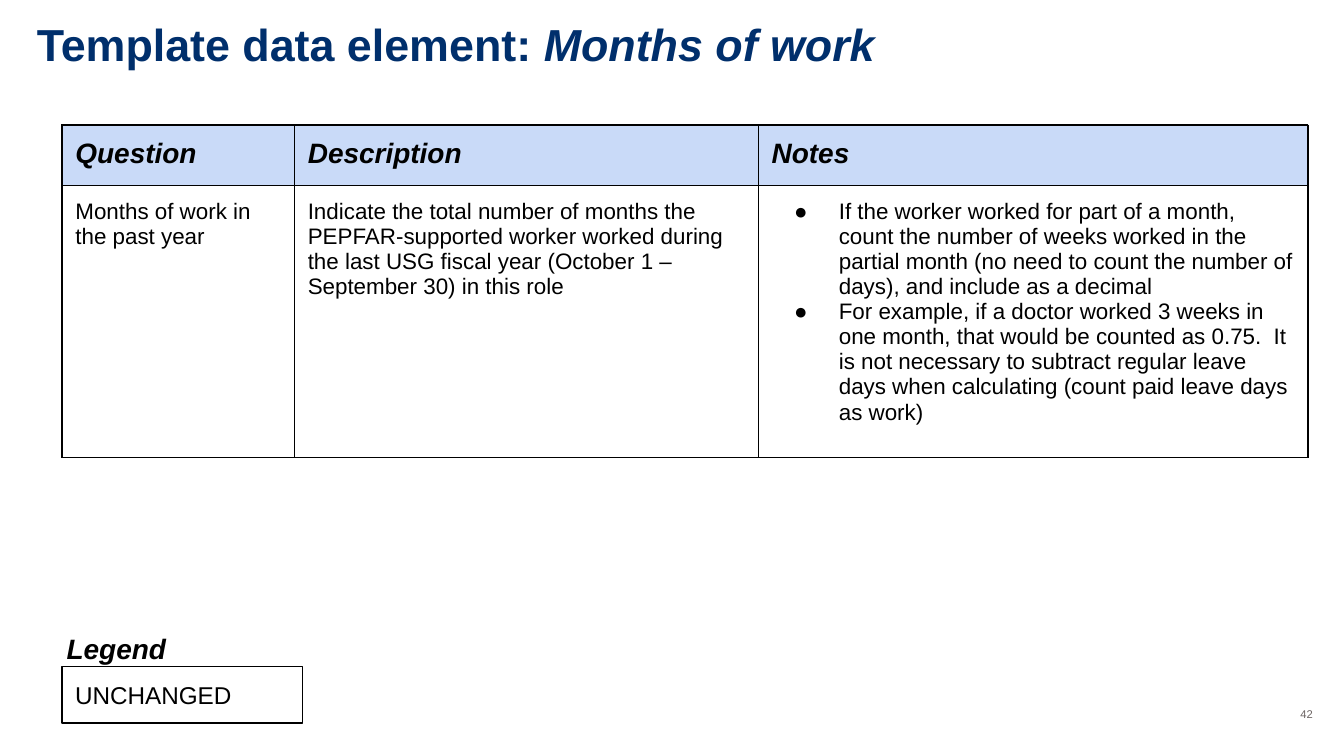
from lxml.etree import SubElement
from pptx import Presentation
from pptx.dml.color import RGBColor
from pptx.enum.shapes import MSO_SHAPE as Shape
from pptx.enum.text import MSO_ANCHOR as Anchor, PP_ALIGN as Align
from pptx.oxml.ns import qn
from pptx.util import Pt

TITLE = [("Template data element: ", False), ("Months of work", True)]
HEADINGS = ["Question", "Description", "Notes"]
ANSWERS = [
    ["Months of work in the past year"],
    ["Indicate the total number of months the PEPFAR-supported worker worked "
     "during the last USG fiscal year (October 1 – September 30) in this role"],
    ["If the worker worked for part of a month, count the number of weeks worked "
     "in the partial month (no need to count the number of days), and include as a decimal",
     "For example, if a doctor worked 3 weeks in one month, that would be counted as 0.75.  "
     "It is not necessary to subtract regular leave days when calculating "
     "(count paid leave days as work)"],
]
BULLETED = 2
WIDTHS = [124.5, 248.5, 294.5]
HEIGHTS = [30.8, 145.5]
LEFT, TOP = 33.2, 67
INSET = 7.2
BLACK, NAVY, GRAY, BLUE = "000000", "002F6C", "6C6463", "C9DAF8"


def color(code):
    return RGBColor.from_string(code)


def add_span(para, text, size, code=BLACK, bold=False, italic=False):
    span = para.add_run()
    span.text = text
    font = span.font
    font.name, font.size, font.bold, font.italic = "Arial", Pt(size), bold, italic
    font.color.rgb = color(code)


def set_frame(frame, anchor=Anchor.TOP, vertical=INSET):
    frame.word_wrap = True
    frame.vertical_anchor = anchor
    frame.margin_left = frame.margin_right = Pt(INSET)
    frame.margin_top = frame.margin_bottom = Pt(vertical)


def add_box(page, left, top, width, height):
    return page.shapes.add_textbox(Pt(left), Pt(top), Pt(width), Pt(height))


def add_bullet(para):
    props = para._p.get_or_add_pPr()
    props.set("marL", str(Pt(36)))
    props.set("indent", str(-Pt(24)))
    bullet_color = SubElement(props, qn("a:buClr"))
    SubElement(bullet_color, qn("a:srgbClr"), val=BLACK)
    SubElement(props, qn("a:buFont"), typeface="Arial")
    SubElement(props, qn("a:buChar"), char="●")


def add_borders(cell):
    props = cell._tc.get_or_add_tcPr()
    for side in ("lnL", "lnR", "lnT", "lnB"):
        line = SubElement(props, qn(f"a:{side}"), w=str(Pt(0.75)))
        fill = SubElement(line, qn("a:solidFill"))
        SubElement(fill, qn("a:srgbClr"), val=BLACK)


def fill_cell(cell, texts, heading, bulleted):
    cell.margin_left = cell.margin_right = Pt(INSET)
    cell.margin_top = cell.margin_bottom = Pt(INSET)
    add_borders(cell)
    if heading:
        cell.fill.solid()
        cell.fill.fore_color.rgb = color(BLUE)
    else:
        cell.fill.background()
    frame = cell.text_frame
    for index, text in enumerate(texts):
        para = frame.add_paragraph() if index else frame.paragraphs[0]
        if bulleted:
            add_bullet(para)
        add_span(para, text, 15 if heading else 12, bold=heading, italic=heading)


def add_question_table(page):
    table = page.shapes.add_table(
        len(HEIGHTS), len(WIDTHS), Pt(LEFT), Pt(TOP), Pt(sum(WIDTHS)), Pt(sum(HEIGHTS))
    ).table
    table.first_row = table.horz_banding = False
    for row, height in zip(table.rows, HEIGHTS):
        row.height = Pt(height)
    for index, width in enumerate(WIDTHS):
        table.columns[index].width = Pt(width)
        fill_cell(table.cell(0, index), [HEADINGS[index]], True, False)
        fill_cell(table.cell(1, index), ANSWERS[index], False, index == BULLETED)


def add_legend(page):
    box = page.shapes.add_shape(Shape.RECTANGLE, Pt(LEFT), Pt(357.2), Pt(129), Pt(30.2))
    box.shadow.inherit = False
    box.fill.background()
    box.line.color.rgb = color(BLACK)
    box.line.width = Pt(0.75)
    set_frame(box.text_frame)
    para = box.text_frame.paragraphs[0]
    para.alignment = Align.LEFT
    add_span(para, "UNCHANGED", 13)

    label = add_box(page, 28.6, 331.2, 83.5, 32.4)
    set_frame(label.text_frame)
    add_span(label.text_frame.paragraphs[0], "Legend", 15, bold=True, italic=True)


def main():
    deck = Presentation()
    deck.slide_width, deck.slide_height = Pt(720), Pt(405)
    page = deck.slides.add_slide(deck.slide_layouts[5])

    title = page.shapes.title
    title.left, title.top, title.width, title.height = Pt(12.5), Pt(-0.7), Pt(671), Pt(45.4)
    set_frame(title.text_frame, Anchor.BOTTOM)
    para = title.text_frame.paragraphs[0]
    para.alignment = Align.LEFT
    for text, italic in TITLE:
        add_span(para, text, 24, NAVY, True, italic)

    number = add_box(page, 667.2, 367.2, 43.2, 31)
    set_frame(number.text_frame, Anchor.MIDDLE, 3.6)
    para = number.text_frame.paragraphs[0]
    para.alignment = Align.RIGHT
    add_span(para, "42", 6, GRAY)

    add_question_table(page)
    add_legend(page)
    deck.save("out.pptx")


if __name__ == "__main__":
    main()
